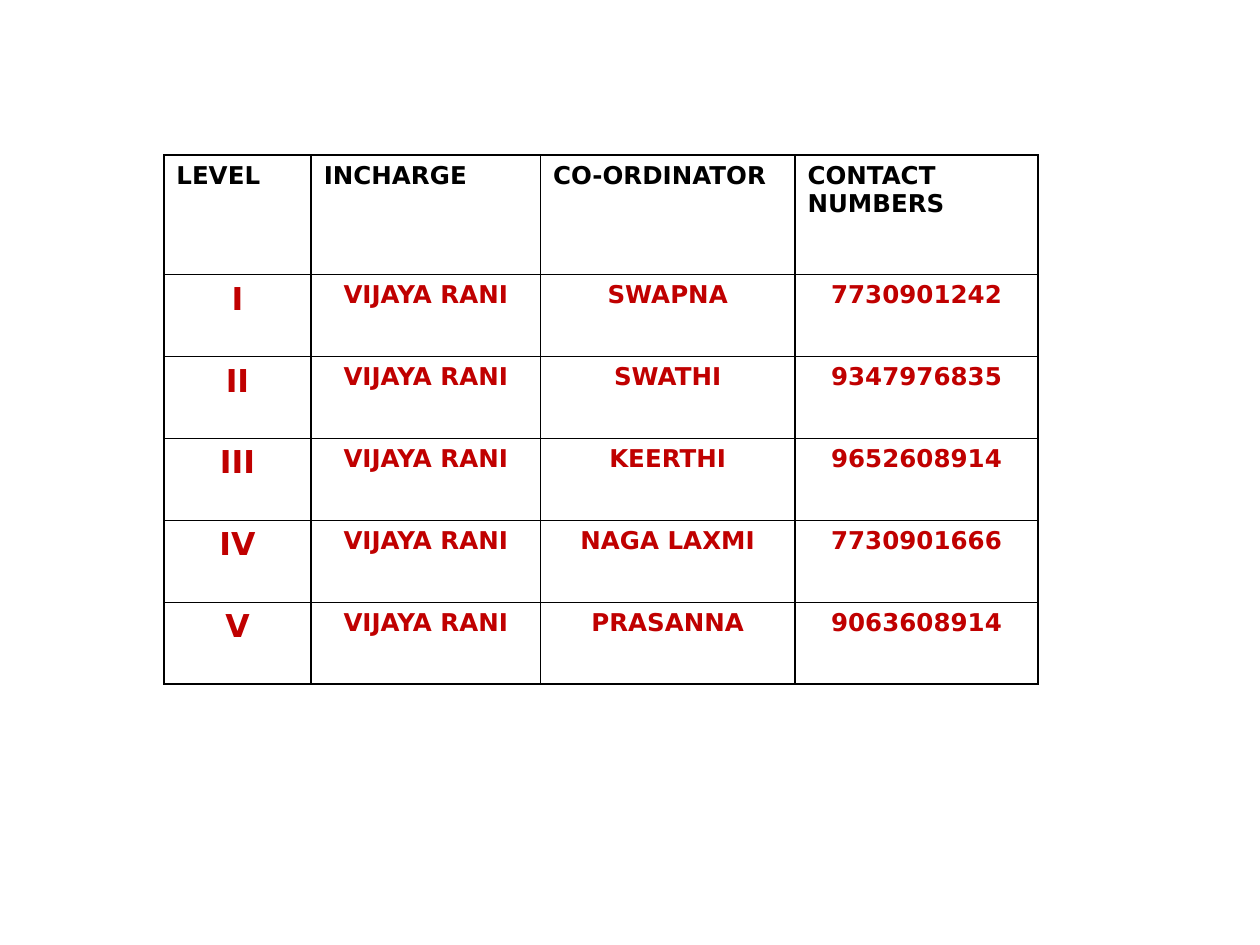
from lxml.etree import SubElement
from pptx import Presentation
from pptx.dml.color import RGBColor
from pptx.enum.text import PP_ALIGN
from pptx.oxml.ns import qn
from pptx.util import Inches, Pt

BLACK = RGBColor(0x00, 0x00, 0x00)
RED = RGBColor(0xC0, 0x00, 0x00)

HEAD = ["LEVEL", "INCHARGE", "CO-ORDINATOR", "CONTACT NUMBERS"]
LEAD = "VIJAYA RANI"
STAFF = [
    ("I", "SWAPNA", "7730901242"),
    ("II", "SWATHI", "9347976835"),
    ("III", "KEERTHI", "9652608914"),
    ("IV", "NAGA LAXMI", "7730901666"),
    ("V", "PRASANNA", "9063608914"),
]
WIDTHS = [1.17, 1.82, 2.02, 1.93]
HEIGHTS = [0.95] + [0.65] * len(STAFF)


def write(cell, text, size=14, color=BLACK, align=PP_ALIGN.LEFT):
    cell.text = text
    para = cell.text_frame.paragraphs[0]
    para.alignment = align
    font = para.runs[0].font
    font.name = "DejaVu Sans"
    font.size = Pt(size)
    font.bold = True
    font.color.rgb = color


def frame(cell):
    """Draw a 1 pt black border on all four sides, with no fill."""
    props = cell._tc.get_or_add_tcPr()
    for side in ("a:lnL", "a:lnR", "a:lnT", "a:lnB"):
        line = SubElement(props, qn(side), w=str(Pt(1)))
        fill = SubElement(line, qn("a:solidFill"))
        SubElement(fill, qn("a:srgbClr"), val=str(BLACK))
    cell.fill.background()


prs = Presentation()
prs.slide_width = Inches(10)
prs.slide_height = Inches(7.5)
slide = prs.slides.add_slide(prs.slide_layouts[6])

rows = [HEAD] + [(level, LEAD, name, phone) for level, name, phone in STAFF]
table = slide.shapes.add_table(
    len(rows), len(HEAD), Inches(1.3), Inches(1.23),
    Inches(sum(WIDTHS)), Inches(sum(HEIGHTS))).table

for col, width in zip(table.columns, WIDTHS):
    col.width = Inches(width)
for row, height in zip(table.rows, HEIGHTS):
    row.height = Inches(height)

for r, row in enumerate(rows):
    for c, text in enumerate(row):
        cell = table.cell(r, c)
        frame(cell)
        if r == 0:
            write(cell, text)
        else:
            write(cell, text, size=18 if c == 0 else 14, color=RED,
                  align=PP_ALIGN.CENTER)

prs.save("out.pptx")
